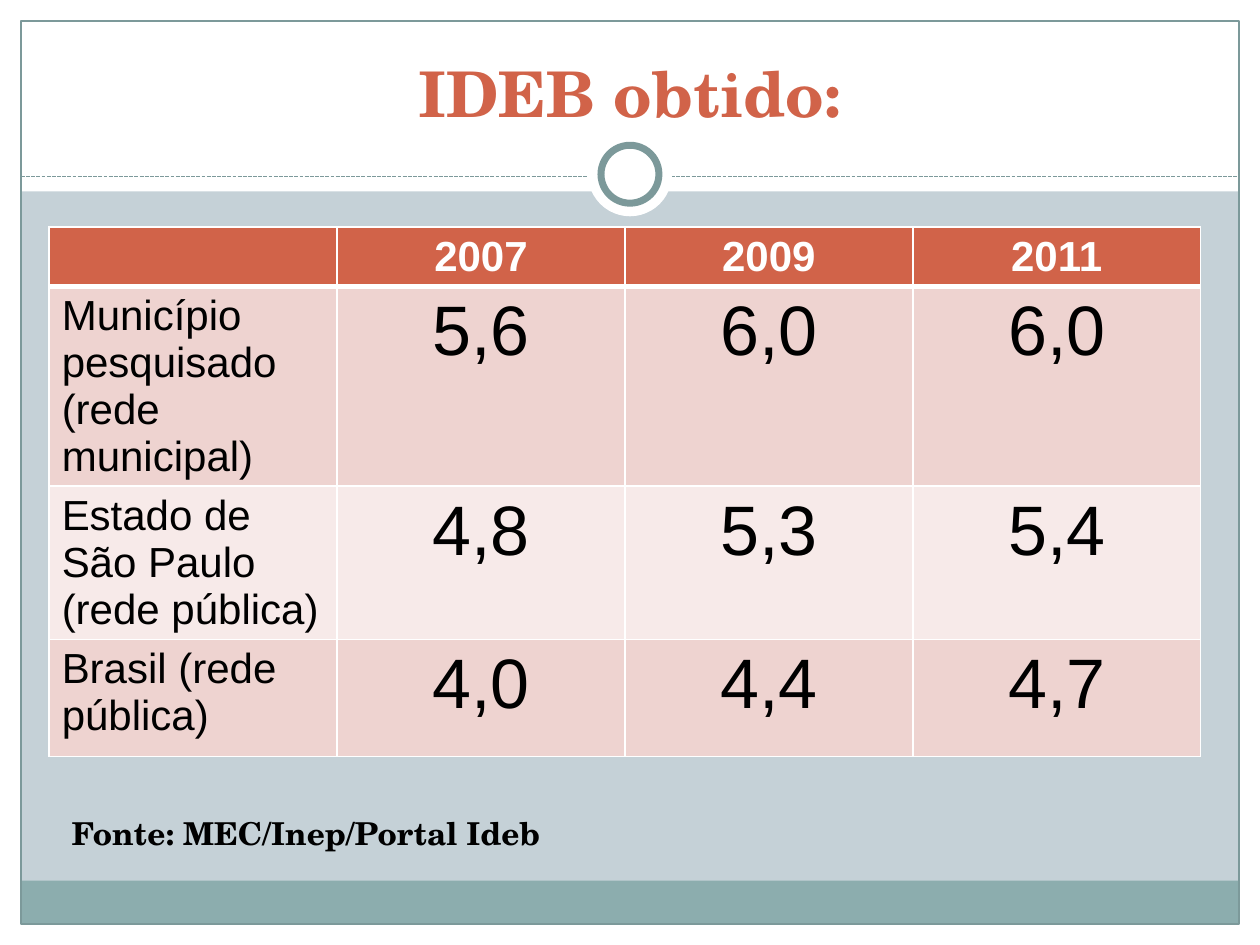
from lxml.etree import SubElement
from pptx import Presentation
from pptx.dml.color import RGBColor
from pptx.enum.dml import MSO_LINE
from pptx.enum.shapes import MSO_CONNECTOR, MSO_SHAPE
from pptx.enum.text import MSO_ANCHOR, PP_ALIGN
from pptx.oxml.ns import qn
from pptx.util import Inches, Pt

COLUMNS, ROWS = 60, 45
WHITE, BLACK, ACCENT, OUTLINE = "FFFFFF", "000000", "D16349", "7C999A"
BANDS = ["EED3D0", "F7EAE9"]
SERIF, SANS = "TeX Gyre Schola", "Arial"

HEADER = ["", "2007", "2009", "2011"]
SCORES = [
    ["Município pesquisado (rede municipal)", "5,6", "6,0", "6,0"],
    ["Estado de São Paulo (rede pública)", "4,8", "5,3", "5,4"],
    ["Brasil (rede pública)", "4,0", "4,4", "4,7"],
]
ROW_HEIGHTS = [2.64, 8.88, 6.78, 5.58]


def rgb(value):
    return RGBColor.from_string(value)


class SlideBuilder:
    """Draws styled elements on one slide, measured in grid columns and rows."""

    def __init__(self, background):
        self.deck = Presentation()
        self.deck.slide_width, self.deck.slide_height = Inches(10), Inches(7.5)
        self.slide = self.deck.slides.add_slide(self.deck.slide_layouts[5])
        self.slide.background.fill.solid()
        self.slide.background.fill.fore_color.rgb = rgb(background)

    def x(self, columns):
        return int(self.deck.slide_width * columns / COLUMNS)

    def y(self, rows):
        return int(self.deck.slide_height * rows / ROWS)

    def box(self, left, top, width, height):
        return self.x(left), self.y(top), self.x(width), self.y(height)

    def set_text(self, frame, text, font, size, color, bold=False, align=PP_ALIGN.LEFT):
        paragraph = frame.paragraphs[0]
        paragraph.text = text
        paragraph.alignment = align
        paragraph.font.name = font
        paragraph.font.size = Pt(size)
        paragraph.font.bold = bold
        paragraph.font.color.rgb = rgb(color)

    def shape(self, kind, *area, fill=None, line=None, weight=0.75):
        shape = self.slide.shapes.add_shape(kind, *self.box(*area))
        shape.shadow.inherit = False
        if fill:
            shape.fill.solid()
            shape.fill.fore_color.rgb = rgb(fill)
        else:
            shape.fill.background()
        if line:
            shape.line.color.rgb = rgb(line)
            shape.line.width = Pt(weight)
        else:
            shape.line.fill.background()

    def dashed_rule(self, left, right, row):
        rule = self.slide.shapes.add_connector(
            MSO_CONNECTOR.STRAIGHT, self.x(left), self.y(row), self.x(right), self.y(row))
        rule.line.color.rgb = rgb(OUTLINE)
        rule.line.width = Pt(0.75)
        rule.line.dash_style = MSO_LINE.SQUARE_DOT
        SubElement(rule._element.spPr, qn("a:effectLst"))

    def title(self, text, *area):
        title = self.slide.shapes.title
        title.left, title.top, title.width, title.height = self.box(*area)
        title.text_frame.vertical_anchor = MSO_ANCHOR.BOTTOM
        self.set_text(title.text_frame, text, SERIF, 36, ACCENT, True, PP_ALIGN.CENTER)
        self.slide.shapes._spTree.append(title._element)

    def text(self, text, *area):
        frame = self.slide.shapes.add_textbox(*self.box(*area)).text_frame
        frame.word_wrap = True
        self.set_text(frame, text, SERIF, 18, BLACK, True)

    def borders(self, cell, bottom, top):
        properties = cell._tc.get_or_add_tcPr()
        weights = {"a:lnL": 1, "a:lnR": 1, "a:lnT": top, "a:lnB": bottom}
        for position, (side, weight) in enumerate(weights.items()):
            line = SubElement(properties, qn(side), w=str(Pt(weight)))
            SubElement(SubElement(line, qn("a:solidFill")), qn("a:srgbClr"), val=WHITE)
            properties.insert(position, line)

    def table(self, header, body, heights, left, top, width):
        rows = [header, *body]
        area = self.box(left, top, width, sum(heights))
        table = self.slide.shapes.add_table(len(rows), len(header), *area).table
        for r, (values, height) in enumerate(zip(rows, heights)):
            table.rows[r].height = self.y(height)
            for c, value in enumerate(values):
                cell = table.cell(r, c)
                cell.fill.solid()
                cell.fill.fore_color.rgb = rgb(BANDS[(r - 1) % 2] if r else ACCENT)
                self.borders(cell, bottom=1 if r else 3, top=3 if r == 1 else 1)
                self.set_text(cell.text_frame, value, SANS, 40 if r and c else 24,
                              BLACK if r else WHITE, bold=r == 0,
                              align=PP_ALIGN.CENTER if c else PP_ALIGN.LEFT)


def main():
    page = SlideBuilder("C5D1D7")
    margins = [(0, 44, 60, 1), (0, 0, 60, 9.12), (0, 0, 1, 45), (59, 0, 1, 45)]
    for margin in margins:
        page.shape(MSO_SHAPE.RECTANGLE, *margin, fill=WHITE)
    page.shape(MSO_SHAPE.RECTANGLE, 1, 41.94, 58, 2.06, fill="8CADAE")
    page.shape(MSO_SHAPE.RECTANGLE, 1, 1, 58, 43, line=OUTLINE)
    page.dashed_rule(1, 59, 8.4)
    page.shape(MSO_SHAPE.OVAL, 28, 6.3, 4, 4, fill=WHITE)
    page.shape(MSO_SHAPE.OVAL, 28.62, 6.92, 2.76, 2.76, fill=WHITE, line=OUTLINE, weight=4)
    page.title("IDEB obtido:", 2, 1.5, 56, 5)
    page.table(HEADER, SCORES, ROW_HEIGHTS, 2.34, 10.8, 54.84)
    page.text("Fonte: MEC/Inep/Portal Ideb", 2.82, 38.46, 33.3, 2.4)
    page.deck.save("out.pptx")


if __name__ == "__main__":
    main()
